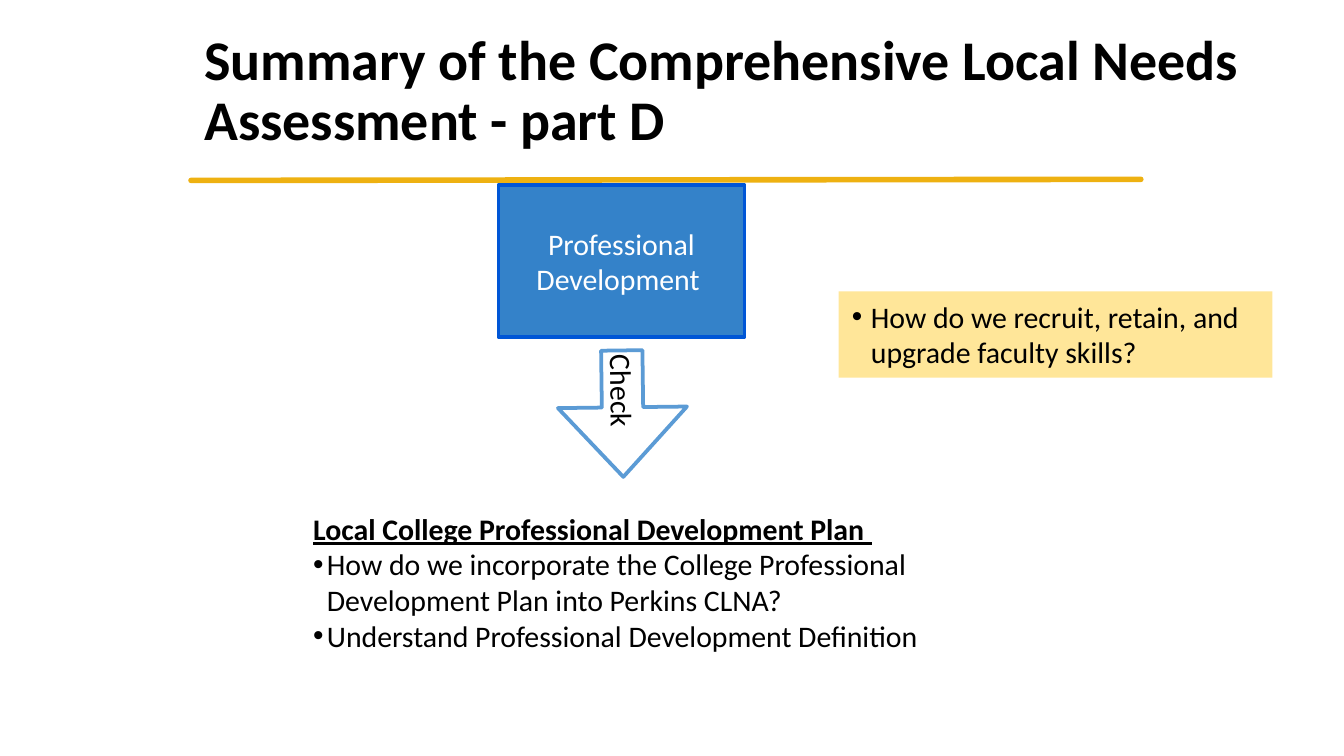
from dataclasses import dataclass
from typing import Optional

from lxml.etree import SubElement
from pptx import Presentation
from pptx.dml.color import RGBColor
from pptx.enum.shapes import MSO_CONNECTOR, MSO_SHAPE
from pptx.enum.text import MSO_ANCHOR, PP_ALIGN
from pptx.oxml.ns import qn
from pptx.util import Cm, Pt

COLORS = {
    "gold": "EEB111",
    "black": "000000",
    "white": "FFFFFF",
    "blue": "3482C9",
    "blue_edge": "0056D6",
    "arrow_edge": "5B9BD5",
    "yellow": "FFE699",
}
FONT = "Calibri"
TIGHT = (0.08, 0.08)
NORMAL = (0.25, 0.13)


@dataclass
class Para:
    text: str
    bold: bool = False
    underline: bool = False
    indent: float = 0  # hanging bullet indent in cm, 0 for no bullet


@dataclass
class Box:
    left: float
    top: float
    width: float
    height: float
    paras: list[Para]
    kind: Optional[MSO_SHAPE] = None  # None makes a plain text box
    fill: Optional[str] = None
    line: Optional[str] = None
    color: str = "black"
    size: float = 16
    align: PP_ALIGN = PP_ALIGN.LEFT
    anchor: MSO_ANCHOR = MSO_ANCHOR.MIDDLE
    insets: tuple[float, float] = TIGHT
    spacing: float = 1.0
    rotation: float = 0
    adjustments: tuple[float, ...] = ()


def rgb(name: str) -> RGBColor:
    return RGBColor.from_string(COLORS[name])


def add_bullet(p, indent: float) -> None:
    pPr = p._p.get_or_add_pPr()
    pPr.set("marL", str(Cm(indent)))
    pPr.set("indent", str(-Cm(indent)))
    SubElement(pPr, qn("a:buFont"), typeface="Arial")
    SubElement(pPr, qn("a:buChar"), char="•")


def add_text(tf, box: Box) -> None:
    tf.word_wrap = True
    tf.vertical_anchor = box.anchor
    tf.margin_left = tf.margin_right = Cm(box.insets[0])
    tf.margin_top = tf.margin_bottom = Cm(box.insets[1])
    for i, para in enumerate(box.paras):
        p = tf.add_paragraph() if i else tf.paragraphs[0]
        p.alignment = box.align
        p.line_spacing = box.spacing
        if para.indent:
            add_bullet(p, para.indent)
        r = p.add_run()
        r.text = para.text
        r.font.name = FONT
        r.font.size = Pt(box.size)
        r.font.bold = para.bold
        r.font.underline = para.underline
        r.font.color.rgb = rgb(box.color)


def add_box(s, box: Box) -> None:
    at = [Cm(v) for v in (box.left, box.top, box.width, box.height)]
    if box.kind is None:
        sp = s.shapes.add_textbox(*at)
    else:
        sp = s.shapes.add_shape(box.kind, *at)
        sp.shadow.inherit = False
        sp.rotation = box.rotation
        for i, value in enumerate(box.adjustments):
            sp.adjustments[i] = value
        sp.fill.solid()
        sp.fill.fore_color.rgb = rgb(box.fill)
        if box.line:
            sp.line.color.rgb = rgb(box.line)
            sp.line.width = Pt(2)
        else:
            sp.line.fill.background()
    add_text(sp.text_frame, box)


def add_rule(s, x1: float, y1: float, x2: float, y2: float) -> None:
    rule = s.shapes.add_connector(
        MSO_CONNECTOR.STRAIGHT, Cm(x1), Cm(y1), Cm(x2), Cm(y2))
    rule.line.color.rgb = rgb("gold")
    rule.line.width = Pt(3)
    rule.line._get_or_add_ln().set("cap", "rnd")
    SubElement(rule._element.spPr, qn("a:effectLst"))


BOXES = [
    # Title
    Box(3.61, 0.36, 20.45, 2.77,
        [Para("Summary of the Comprehensive Local Needs Assessment - part D",
              bold=True)],
        size=30, insets=NORMAL, spacing=0.9),
    # Topic
    Box(9.42, 3.5, 4.65, 2.87, [Para("Professional Development ")],
        kind=MSO_SHAPE.RECTANGLE, fill="blue", line="blue_edge",
        color="white", align=PP_ALIGN.CENTER),
    # Development plan
    Box(5.84, 9.55, 12.27, 2.9, [
        Para("Local College Professional Development Plan ",
             bold=True, underline=True),
        Para("How do we incorporate the College Professional Development "
             "Plan into Perkins CLNA?", indent=0.26),
        Para("Understand Professional Development Definition", indent=0.26),
    ]),
    # Guiding question
    Box(15.85, 5.51, 8.2, 1.63,
        [Para("How do we recruit, retain, and upgrade faculty skills?",
              indent=0.36)],
        kind=MSO_SHAPE.RECTANGLE, fill="yellow",
        anchor=MSO_ANCHOR.TOP, insets=NORMAL),
    # Check arrow, turned to point down
    Box(10.57, 6.6, 2.39, 2.44, [Para("Check")],
        kind=MSO_SHAPE.RIGHT_ARROW, fill="white", line="arrow_edge",
        rotation=89.3, adjustments=(0.32, 0.55)),
]


def main() -> None:
    prs = Presentation()
    prs.slide_width, prs.slide_height = Cm(25.4), Cm(14.29)
    s = prs.slides.add_slide(prs.slide_layouts[6])
    add_rule(s, 3.61, 3.41, 21.56, 3.39)
    for box in BOXES:
        add_box(s, box)
    prs.save("out.pptx")


if __name__ == "__main__":
    main()
